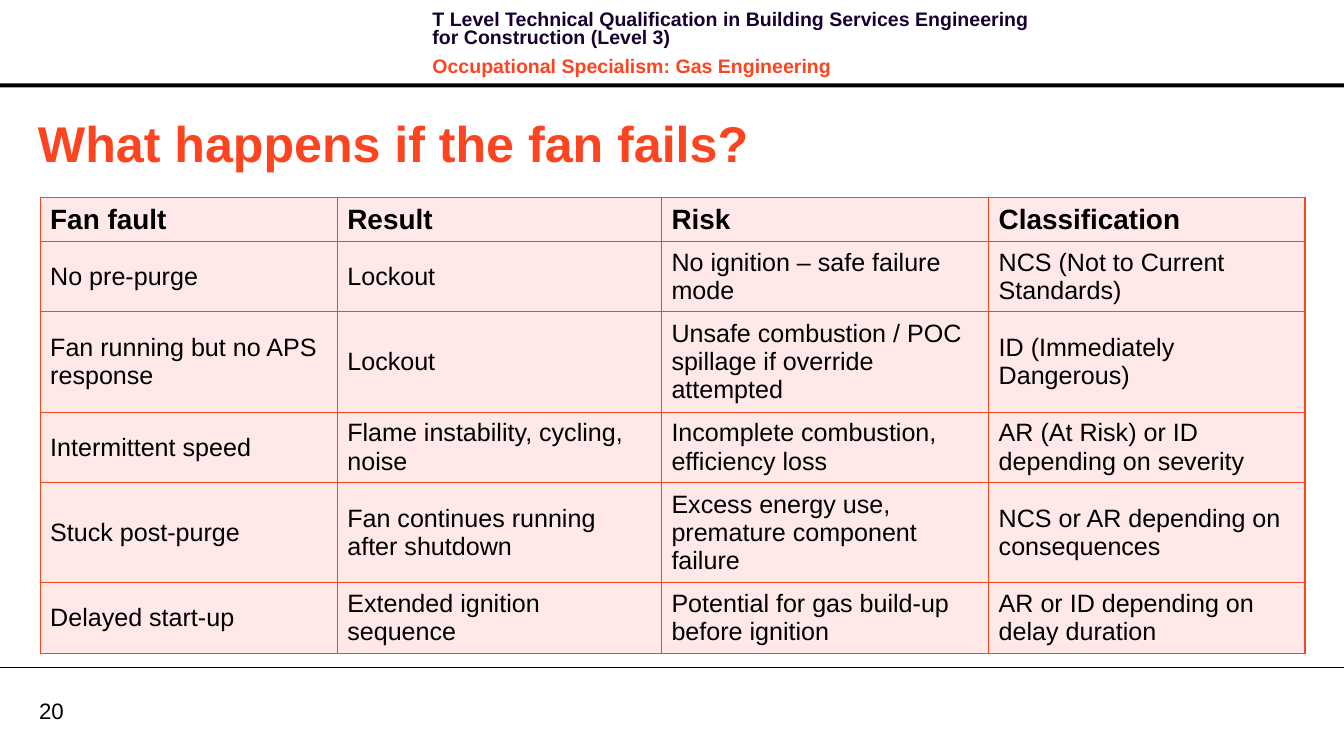
from lxml.etree import SubElement
from pptx import Presentation
from pptx.dml.color import RGBColor
from pptx.enum.shapes import MSO_CONNECTOR, MSO_SHAPE
from pptx.enum.text import MSO_ANCHOR
from pptx.oxml.ns import qn
from pptx.util import Inches, Pt

COLOURS = {"ink": "000000", "navy": "170130", "orange": "FC4421", "blush": "FEE9E8"}
WIDTH, HEIGHT = Inches(13.39), Inches(7.48)


def place(left, top, width, height):
    return [round(percent * side / 100)
            for percent, side in zip((left, top, width, height), (WIDTH, HEIGHT) * 2)]


def style(paragraph, size, colour, bold):
    for name, value in {"name": "Arial", "size": Pt(size), "bold": bold}.items():
        setattr(paragraph.font, name, value)
    paragraph.font.color.rgb = RGBColor.from_string(COLOURS[colour])


deck = Presentation()
deck.slide_width, deck.slide_height = WIDTH, HEIGHT
slide = deck.slides.add_slide(deck.slide_layouts[6])

header_rule = slide.shapes.add_shape(MSO_SHAPE.RECTANGLE, *place(0, 11.1, 100, 0.53))
header_rule.shadow.inherit = False
header_rule.fill.solid()
header_rule.fill.fore_color.rgb = RGBColor.from_string(COLOURS["ink"])
header_rule.line.fill.background()

left, footer_top, right, _ = place(0, 88.9, 100, 0)
footer_rule = slide.shapes.add_connector(
    MSO_CONNECTOR.STRAIGHT, left, footer_top, right, footer_top)
footer_rule.line.width = Pt(0.75)
footer_rule.line.color.rgb = RGBColor.from_string(COLOURS["ink"])
SubElement(footer_rule._element.spPr, qn("a:effectLst"))

course = {"line_spacing": Pt(13.1), "space_after": Pt(4)}
TEXTS = [
    ((2.91, 92.78, 4.78, 3.61), MSO_ANCHOR.MIDDLE, (0, 0), {},
     [("20", 16, "ink", False)]),
    ((31.44, 0.94, 47.57, 8.56), MSO_ANCHOR.TOP, (0.1, 0.05), course,
     [("T Level Technical Qualification in Building Services Engineering "
       "for Construction (Level 3)", 14, "navy", True),
      ("Occupational Specialism: Gas Engineering", 14, "orange", True)]),
    ((2.09, 14.17, 95, 9.49), MSO_ANCHOR.MIDDLE, (0.1, 0.05), {},
     [("What happens if the fan fails?", 36, "orange", True)]),
]
for area, anchor, (side_inset, end_inset), spacing, lines in TEXTS:
    frame = slide.shapes.add_textbox(*place(*area)).text_frame
    frame_format = {
        "word_wrap": True, "vertical_anchor": anchor,
        "margin_left": Inches(side_inset), "margin_right": Inches(side_inset),
        "margin_top": Inches(end_inset), "margin_bottom": Inches(end_inset),
    }
    for name, value in frame_format.items():
        setattr(frame, name, value)
    for index, (words, size, colour, bold) in enumerate(lines):
        paragraph = frame.add_paragraph() if index else frame.paragraphs[0]
        paragraph.text = words
        for name, value in spacing.items():
            setattr(paragraph, name, value)
        if index:
            paragraph.space_before = Pt(4)
        style(paragraph, size, colour, bold)

FAULTS = [
    ("Fan fault", "Result", "Risk", "Classification"),
    ("No pre-purge", "Lockout", "No ignition – safe failure mode",
     "NCS (Not to Current Standards)"),
    ("Fan running but no APS response", "Lockout",
     "Unsafe combustion / POC spillage if override attempted",
     "ID (Immediately Dangerous)"),
    ("Intermittent speed", "Flame instability, cycling, noise",
     "Incomplete combustion, efficiency loss",
     "AR (At Risk) or ID depending on severity"),
    ("Stuck post-purge", "Fan continues running after shutdown",
     "Excess energy use, premature component failure",
     "NCS or AR depending on consequences"),
    ("Delayed start-up", "Extended ignition sequence",
     "Potential for gas build-up before ignition",
     "AR or ID depending on delay duration"),
]
COLUMN_SHARES = [22.11, 24.12, 24.35, 23.53]
ROW_SHARES = [5.48] + [1.34 + 3.76 * line_count for line_count in (2, 3, 2, 3, 2)]

fault_table = slide.shapes.add_table(
    len(FAULTS), len(COLUMN_SHARES),
    *place(2.99, 26.34, sum(COLUMN_SHARES), sum(ROW_SHARES))).table
fault_table.first_row = fault_table.horz_banding = False
for column, share in zip(fault_table.columns, COLUMN_SHARES):
    column.width = round(WIDTH * share / 100)
for row, share in zip(fault_table.rows, ROW_SHARES):
    row.height = round(HEIGHT * share / 100)

for row_index, entries in enumerate(FAULTS):
    for column_index, entry in enumerate(entries):
        cell = fault_table.cell(row_index, column_index)
        cell.text = entry
        cell.vertical_anchor = MSO_ANCHOR.MIDDLE
        heading = row_index == 0
        style(cell.text_frame.paragraphs[0], 20 if heading else 18, "ink", heading)
        for edge in ("a:lnL", "a:lnR", "a:lnT", "a:lnB"):
            border = SubElement(cell._tc.get_or_add_tcPr(), qn(edge), w=str(Pt(1)))
            border_fill = SubElement(border, qn("a:solidFill"))
            SubElement(border_fill, qn("a:srgbClr"), val=COLOURS["orange"])
        cell.fill.solid()
        cell.fill.fore_color.rgb = RGBColor.from_string(COLOURS["blush"])

deck.save("out.pptx")
